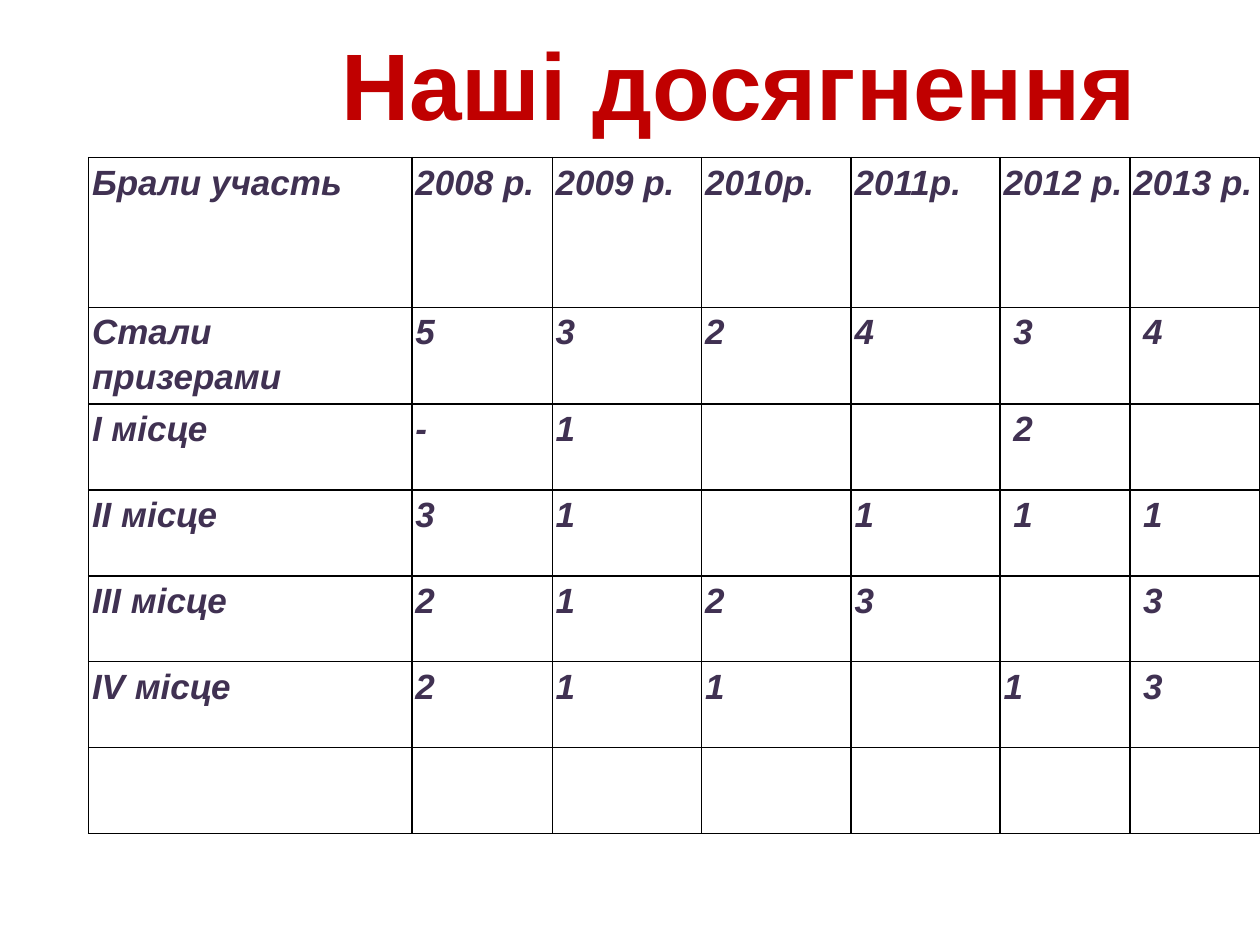
from dataclasses import dataclass

from lxml import etree
from pptx import Presentation
from pptx.dml.color import RGBColor
from pptx.enum.text import MSO_ANCHOR, MSO_AUTO_SIZE, PP_ALIGN
from pptx.oxml.ns import qn
from pptx.slide import Slide
from pptx.table import _Cell
from pptx.text.text import _Paragraph
from pptx.util import Pt

TOP = MSO_ANCHOR.TOP
CENTER = PP_ALIGN.CENTER
GROW_SHAPE = MSO_AUTO_SIZE.SHAPE_TO_FIT_TEXT
TITLE_ONLY_LAYOUT = 5


@dataclass(frozen=True)
class Theme:
    font: str = "Arial"
    title_size: float = 54
    cell_size: float = 20
    title_color: str = "C00000"
    cell_color: str = "403152"
    fill_color: str = "FFFFFF"
    border_color: str = "000000"
    border_width: float = 1


@dataclass(frozen=True)
class Box:
    left: float
    top: float
    width: float
    height: float


THEME = Theme()
TITLE_BOX = Box(123.84, 11.5, 596.16, 72.7)
TABLE_LEFT, TABLE_TOP = 50.6, 90
COLUMN_WIDTHS = (184.8, 80.2, 85.4, 85.4, 85.2, 74.2, 74.2)
HEADER_HEIGHT, ROW_HEIGHT = 85.6, 49.1
ACHIEVEMENTS = (
    ("Брали участь", "2008 р.", "2009 р.", "2010р.", "2011р.", "2012 р.", "2013 р."),
    ("Стали призерами", "5", "3", "2", "4", " 3", " 4"),
    ("І місце", "-", "1", "", "", " 2", ""),
    ("II місце", "3", "1", "", "1", " 1", " 1"),
    ("III місце", "2", "1", "2", "3", "", " 3"),
    ("IV місце", "2", "1", "1", "", "1", " 3"),
    ("",) * len(COLUMN_WIDTHS),
)


def add_run(paragraph: _Paragraph, text: str, size: float, color: str, italic: bool) -> None:
    run = paragraph.add_run()
    run.text = text
    run.font.name = THEME.font
    run.font.size = Pt(size)
    run.font.bold = True
    run.font.italic = italic
    run.font.color.rgb = RGBColor.from_string(color)


def add_title(slide: Slide, text: str, box: Box) -> None:
    title = slide.shapes.title
    title.left, title.top = Pt(box.left), Pt(box.top)
    title.width, title.height = Pt(box.width), Pt(box.height)
    frame = title.text_frame
    frame.word_wrap = True
    frame.auto_size = GROW_SHAPE
    frame.vertical_anchor = TOP
    paragraph = frame.paragraphs[0]
    paragraph.alignment = CENTER
    add_run(paragraph, text, THEME.title_size, THEME.title_color, italic=False)


def add_borders(cell: _Cell) -> None:
    """Outline all four sides; the lines must precede the fill in the XML."""
    properties = cell._tc.get_or_add_tcPr()
    for index, side in enumerate(("a:lnL", "a:lnR", "a:lnT", "a:lnB")):
        line = etree.Element(qn(side), w=str(Pt(THEME.border_width)))
        fill = etree.SubElement(line, qn("a:solidFill"))
        etree.SubElement(fill, qn("a:srgbClr"), val=THEME.border_color)
        properties.insert(index, line)


def fill_cell(cell: _Cell, text: str) -> None:
    cell.margin_left = cell.margin_right = Pt(2)
    cell.margin_top = cell.margin_bottom = Pt(0)
    cell.vertical_anchor = TOP
    cell.fill.solid()
    cell.fill.fore_color.rgb = RGBColor.from_string(THEME.fill_color)
    add_borders(cell)
    if text:
        paragraph = cell.text_frame.paragraphs[0]
        paragraph.line_spacing = 1.15
        paragraph.space_after = Pt(10)
        add_run(paragraph, text, THEME.cell_size, THEME.cell_color, italic=True)


def add_achievements_table(slide: Slide) -> None:
    row_heights = (HEADER_HEIGHT,) + (ROW_HEIGHT,) * (len(ACHIEVEMENTS) - 1)
    table = slide.shapes.add_table(
        len(row_heights), len(COLUMN_WIDTHS), Pt(TABLE_LEFT), Pt(TABLE_TOP),
        Pt(sum(COLUMN_WIDTHS)), Pt(sum(row_heights)),
    ).table
    table.first_row = table.horz_banding = False
    for column, width in zip(table.columns, COLUMN_WIDTHS):
        column.width = Pt(width)
    for row, height, texts in zip(table.rows, row_heights, ACHIEVEMENTS):
        row.height = Pt(height)
        for cell, text in zip(row.cells, texts):
            fill_cell(cell, text)


def main() -> None:
    presentation = Presentation()
    presentation.slide_width, presentation.slide_height = Pt(720), Pt(540)
    slide = presentation.slides.add_slide(presentation.slide_layouts[TITLE_ONLY_LAYOUT])
    add_title(slide, "Наші досягнення", TITLE_BOX)
    add_achievements_table(slide)
    presentation.save("out.pptx")


if __name__ == "__main__":
    main()
